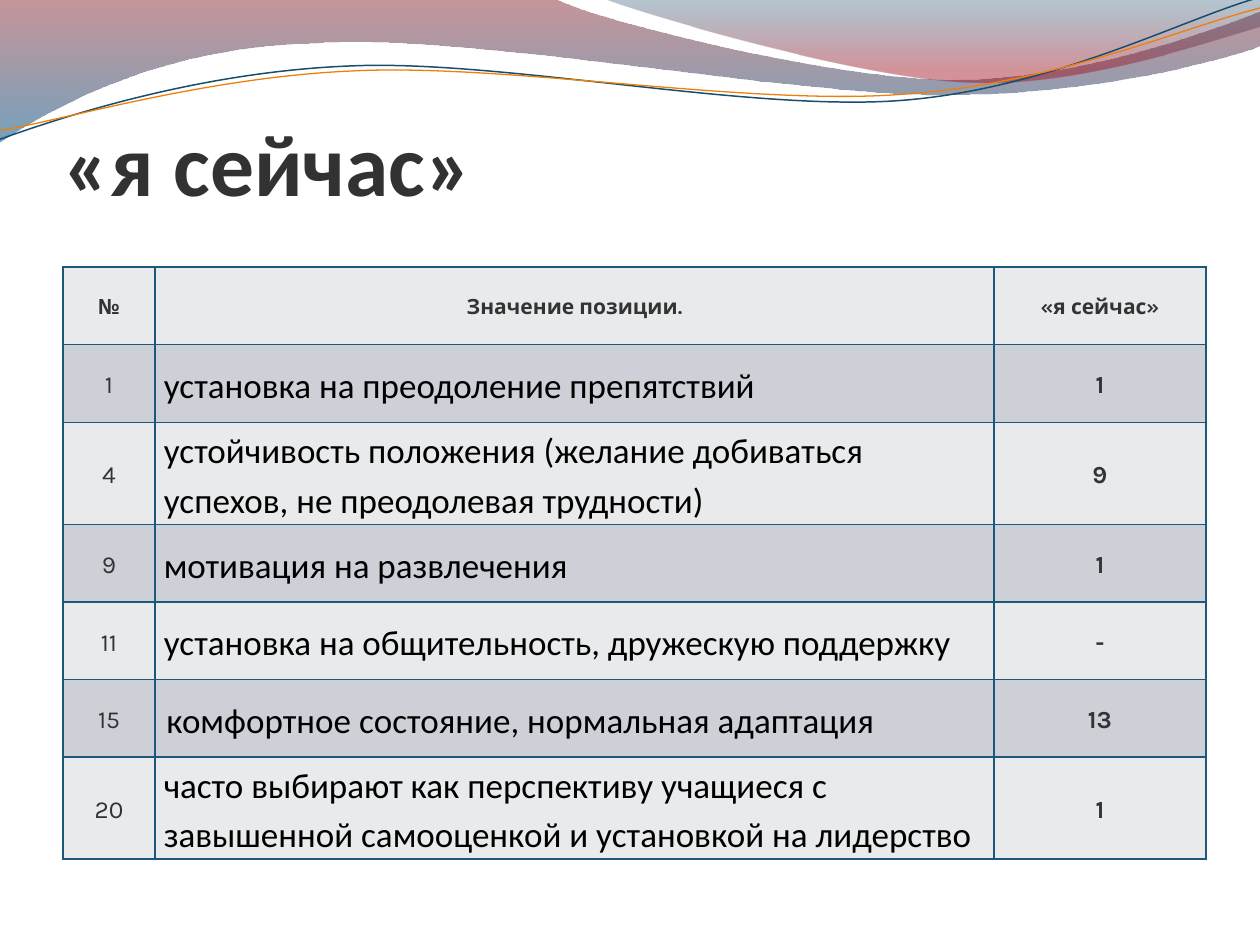
import pptx
import pptx.util
import pptx.dml.color
import pptx.enum.text
import pptx.oxml.ns
import lxml.etree

Inches = pptx.util.Inches
Pt = pptx.util.Pt
qn = pptx.oxml.ns.qn


def color(value):
    return pptx.dml.color.RGBColor.from_string(value)


def add_curve(slide, start, segments, closed):
    points = [(Inches(x), Inches(y)) for segment in segments for x, y in segment]
    builder = slide.shapes.build_freeform(Inches(start[0]), Inches(start[1]), scale=1.0)
    builder.add_line_segments(points, close=closed)
    shape = builder.convert_to_shape()
    shape.shadow.inherit = False
    lines = shape.element.iter(qn("a:lnTo"))
    lines = iter(list(lines))
    for segment in segments:
        pieces = [next(lines) for point in segment]
        if len(pieces) == 3:
            curve = lxml.etree.Element(qn("a:cubicBezTo"))
            pieces[0].addprevious(curve)
            for piece in pieces:
                curve.append(piece[0])
                piece.getparent().remove(piece)
    return shape


presentation = pptx.Presentation()
presentation.slide_width = Inches(10)
presentation.slide_height = Inches(7.5)
slide = presentation.slides.add_slide(presentation.slide_layouts[5])

waves = [
    ((0, 0), [
        [(4.4, -0.01)],
        [(4.76, 0.17), (6.64, 0.63), (7.58, 0.63)],
        [(8.53, 0.63), (9.58, 0.26), (10, 0.09)],
        [(10.01, 0.36)],
        [(9.83, 0.44), (8.7, 0.76), (7.46, 0.75)],
        [(6.22, 0.75), (3.82, 0.28), (2.57, 0.34)],
        [(1.29, 0.36), (0.46, 0.83), (-0.01, 1.13)],
        [(0, 0)],
    ], [(0, "7E1621", 45), (1, "005689", 55)]),
    ((4.79, -0.01), [
        [(5.09, 0.11), (6.82, 0.62), (7.69, 0.65)],
        [(8.56, 0.69), (9.61, 0.32), (10, 0.21)],
        [(10, 0)],
        [(4.79, -0.01)],
    ], [(0, "094467", 30), (0.8, "A10F1F", 45)]),
]
for start, segments, stops in waves:
    wave = add_curve(slide, start, segments, True)
    wave.line.fill.background()
    wave.fill.gradient()
    wave.fill.gradient_angle = 270
    for stop, (position, value, opacity) in zip(wave.fill.gradient_stops, stops):
        stop.position = position
        stop.color.rgb = color(value)
    for element, stop in zip(wave.element.iter(qn("a:srgbClr")), stops):
        lxml.etree.SubElement(element, qn("a:alpha"), val=str(stop[2] * 1000))

ribbons = [
    ((-0.02, 0.87), [
        [(0.47, 0.72), (1.58, 0.41), (2.78, 0.42)],
        [(3.96, 0.42), (5.91, 0.93), (7.12, 0.9)],
        [(8.32, 0.87), (9.4, 0.36), (10, 0.22)],
    ], "184E6D", 0.85),
    ((-0.02, 0.8), [
        [(0.46, 0.75), (1.64, 0.45), (2.83, 0.46)],
        [(4.03, 0.46), (5.96, 0.89), (7.16, 0.85)],
        [(8.35, 0.83), (9.42, 0.42), (10.02, 0.3)],
    ], "F07F09", 0.75),
]
for start, segments, value, width in ribbons:
    ribbon = add_curve(slide, start, segments, False)
    ribbon.rotation = 357.3
    ribbon.fill.background()
    ribbon.line.color.rgb = color(value)
    ribbon.line.width = Pt(width)

title = slide.shapes.title
title.element.getparent().append(title.element)
title.left, title.top = Inches(0.5), Inches(0.77)
title.width, title.height = Inches(9), Inches(0.93)
frame = title.text_frame
frame.margin_left = frame.margin_right = frame.margin_bottom = 0
frame.margin_top = Inches(0.05)
frame.vertical_anchor = pptx.enum.text.MSO_ANCHOR.BOTTOM
paragraph = frame.paragraphs[0]
paragraph.alignment = pptx.enum.text.PP_ALIGN.LEFT
run = paragraph.add_run()
run.text = "«я сейчас»"
run.font.name = "Calibri"
run.font.size = Pt(50)
run.font.bold = True
run.font.color.rgb = color("323232")

rows = [
    ("№", "Значение позиции.", "«я сейчас»"),
    ("1", "установка на преодоление препятствий", "1"),
    ("4", "устойчивость положения (желание добиваться успехов, не преодолевая трудности)", "9"),
    ("9", "мотивация на развлечения", "1"),
    ("11", "установка на общительность, дружескую поддержку", "-"),
    ("15", "комфортное состояние, нормальная адаптация", "13"),
    ("20", "часто выбирают как перспективу учащиеся с завышенной самооценкой и установкой на лидерство", "1"),
]
column_widths = [0.73, 6.66, 1.68]
table_height = 4.7
tall_height = 0.81
tall_rows = (2, 6)
short_height = (table_height - tall_height * len(tall_rows)) / (len(rows) - len(tall_rows))
table = slide.shapes.add_table(
    len(rows), len(column_widths), Inches(0.5), Inches(2.12),
    Inches(sum(column_widths)), Inches(table_height),
).table
for column, width in zip(table.columns, column_widths):
    column.width = Inches(width)
for row_index, row in enumerate(table.rows):
    row.height = Inches(tall_height if row_index in tall_rows else short_height)

for row_index, texts in enumerate(rows):
    for column_index, text in enumerate(texts):
        cell = table.cell(row_index, column_index)
        cell.margin_left = cell.margin_right = Inches(0.07)
        cell.margin_top = cell.margin_bottom = 0
        cell.vertical_anchor = pptx.enum.text.MSO_ANCHOR.MIDDLE
        properties = cell._tc.get_or_add_tcPr()
        for side in ("a:lnL", "a:lnR", "a:lnT", "a:lnB"):
            border = lxml.etree.SubElement(properties, qn(side), w=str(Pt(1)))
            border_fill = lxml.etree.SubElement(border, qn("a:solidFill"))
            lxml.etree.SubElement(border_fill, qn("a:srgbClr"), val="1B587C")
        cell.fill.solid()
        cell.fill.fore_color.rgb = color("CDD1D7" if row_index % 2 else "E8EAEC")

        is_header = row_index == 0
        is_meaning = column_index == 1 and not is_header
        paragraph = cell.text_frame.paragraphs[0]
        paragraph.line_spacing = 1.15
        paragraph.alignment = (
            pptx.enum.text.PP_ALIGN.LEFT if is_meaning else pptx.enum.text.PP_ALIGN.CENTER
        )
        if is_meaning and texts[0] == "15":
            paragraph._p.get_or_add_pPr().set("marL", str(Inches(0.02)))
        run = paragraph.add_run()
        run.text = text
        run.font.name = "Calibri" if is_meaning else "Karla"
        run.font.size = Pt(12 if is_header else 20 if is_meaning else 14)
        run.font.bold = is_header or column_index == 2
        run.font.color.rgb = color("000000" if is_meaning else "333333")

presentation.save("out.pptx")
